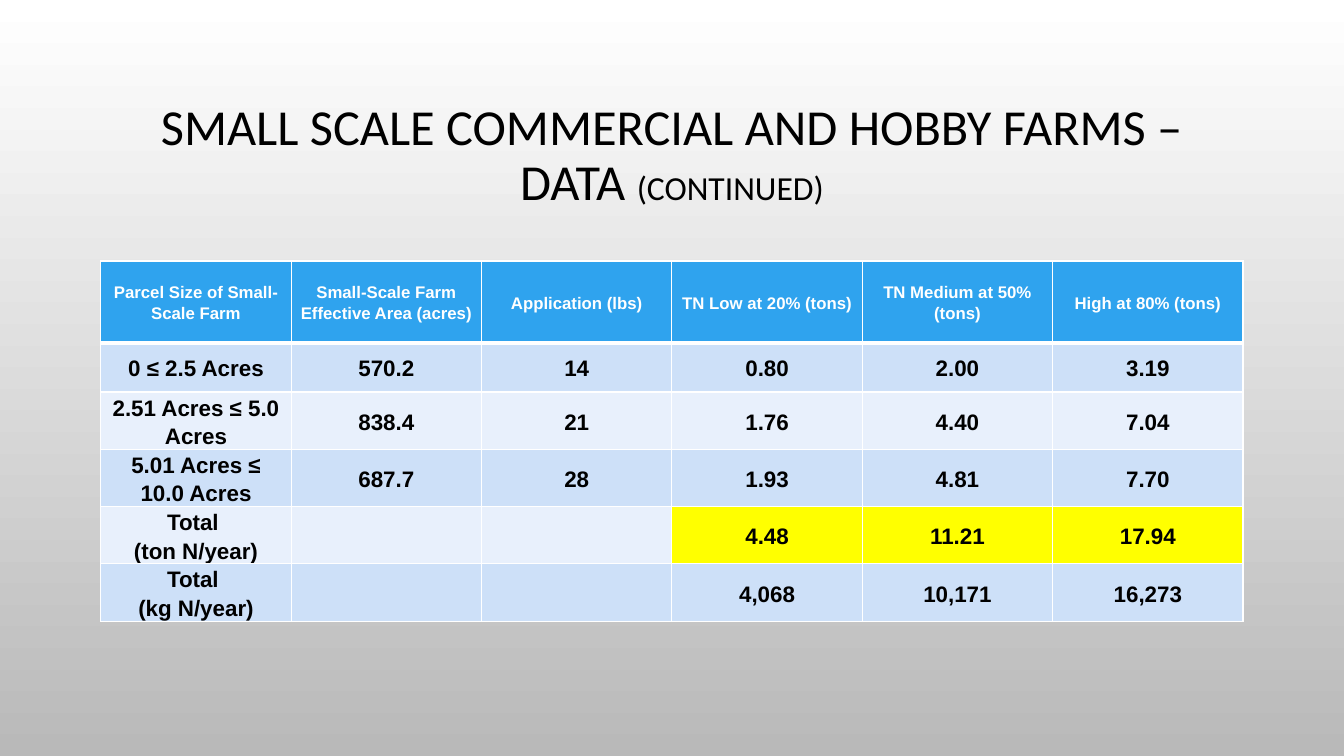
"""Builds the slide with the nitrogen load table for small farms."""
from dataclasses import dataclass

from lxml import etree
from pptx import Presentation
from pptx.dml.color import RGBColor
from pptx.enum.text import MSO_ANCHOR, PP_ALIGN
from pptx.oxml.ns import qn
from pptx.util import Pt

MIDDLE = MSO_ANCHOR.MIDDLE
CENTER = PP_ALIGN.CENTER
TITLE_ONLY = 5


@dataclass(frozen=True)
class Theme:
    """Colours, fonts and type sizes of the slide."""
    black: str = "000000"
    white: str = "FFFFFF"
    gray: str = "B9B9B9"
    blue: str = "2FA3EE"
    dark: str = "CDE0F8"
    light: str = "E8F0FC"
    yellow: str = "FFFF00"
    title_font: str = "Calibri"
    body_font: str = "Arial"
    title: int = 36
    small: int = 24
    head: int = 12
    body: int = 16


THEME = Theme()
TITLE = [
    ("SMALL SCALE COMMERCIAL AND HOBBY FARMS –DATA ", THEME.title),
    ("(CONTINUED)", THEME.small),
]
ROWS = [
    ["Parcel Size of Small-Scale Farm", "Small-Scale Farm Effective Area (acres)",
     "Application (lbs)", "TN Low at 20% (tons)", "TN Medium at 50% (tons)",
     "High at 80% (tons)"],
    ["0 ≤ 2.5 Acres", "570.2", "14", "0.80", "2.00", "3.19"],
    ["2.51 Acres ≤ 5.0 Acres", "838.4", "21", "1.76", "4.40", "7.04"],
    ["5.01 Acres ≤ 10.0 Acres", "687.7", "28", "1.93", "4.81", "7.70"],
    ["Total \n(ton N/year)", "", "", "4.48", "11.21", "17.94"],
    ["Total \n(kg N/year)", "", "", "4,068", "10,171", "16,273"],
]
HEIGHTS = [58.3, 35.3, 38.2, 38.2, 38.2, 38.2]
TOTAL_ROW = 4
FIRST_SUM = 3


def add_run(para, text, size, face, color, bold=False):
    """Add one formatted run to a paragraph."""
    run = para.add_run()
    run.text = text
    font = run.font
    font.size, font.name, font.bold = Pt(size), face, bold
    font.color.rgb = RGBColor.from_string(color)


def set_back(slide):
    """Fade the background from white to gray, top to bottom."""
    fill = slide.background.fill
    fill.gradient()
    fill.gradient_angle = 270
    for stop, color in zip(fill.gradient_stops, (THEME.white, THEME.gray)):
        stop.color.rgb = RGBColor.from_string(color)


def set_title(slide):
    """Place the title and write its runs."""
    title = slide.shapes.title
    title.left, title.top = Pt(72), Pt(49)
    title.width, title.height = Pt(816), Pt(126)
    frame = title.text_frame
    frame.word_wrap = True
    frame.vertical_anchor = MIDDLE
    para = frame.paragraphs[0]
    para.alignment, para.line_spacing = CENTER, 0.9
    for text, size in TITLE:
        add_run(para, text, size, THEME.title_font, THEME.black)


def set_edges(cell, top, bottom):
    """Draw white borders around a cell, with widths in points."""
    props = cell._tc.get_or_add_tcPr()
    widths = {"a:lnL": 1, "a:lnR": 1, "a:lnT": top, "a:lnB": bottom}
    for spot, (tag, width) in enumerate(widths.items()):
        line = etree.Element(qn(tag), w=str(Pt(width)))
        fill = etree.SubElement(line, qn("a:solidFill"))
        etree.SubElement(fill, qn("a:srgbClr"), val=THEME.white)
        props.insert(spot, line)


def pick_fill(row, col):
    """Return the fill colour for a place in the table."""
    if row == 0:
        return THEME.blue
    if row == TOTAL_ROW and col >= FIRST_SUM:
        return THEME.yellow
    return THEME.dark if row % 2 else THEME.light


def fill_cell(cell, text, row, col):
    """Write and format one table cell."""
    cell.vertical_anchor = MIDDLE
    cell.margin_left = cell.margin_right = Pt(6.5)
    cell.margin_top = cell.margin_bottom = Pt(0)
    cell.fill.solid()
    cell.fill.fore_color.rgb = RGBColor.from_string(pick_fill(row, col))
    set_edges(cell, 3 if row == 1 else 1, 3 if row == 0 else 1)
    size, color = (THEME.body, THEME.black) if row else (THEME.head, THEME.white)
    frame = cell.text_frame
    for spot, line in enumerate(text.split("\n") if text else []):
        para = frame.add_paragraph() if spot else frame.paragraphs[0]
        para.alignment, para.line_spacing = CENTER, 1.15
        add_run(para, line, size, THEME.body_font, color, True)


def add_grid(slide):
    """Add the farm data table."""
    count = len(ROWS[0])
    shape = slide.shapes.add_table(
        len(ROWS), count, Pt(72), Pt(186.5), Pt(816), Pt(sum(HEIGHTS)))
    table = shape.table
    for col in table.columns:
        col.width = Pt(816 / count)
    for row, (texts, height) in enumerate(zip(ROWS, HEIGHTS)):
        table.rows[row].height = Pt(height)
        for col, text in enumerate(texts):
            fill_cell(table.cell(row, col), text, row, col)


def main():
    """Build and save the slide."""
    deck = Presentation()
    deck.slide_width, deck.slide_height = Pt(960), Pt(540)
    slide = deck.slides.add_slide(deck.slide_layouts[TITLE_ONLY])
    set_back(slide)
    set_title(slide)
    add_grid(slide)
    deck.save("out.pptx")


if __name__ == "__main__":
    main()
